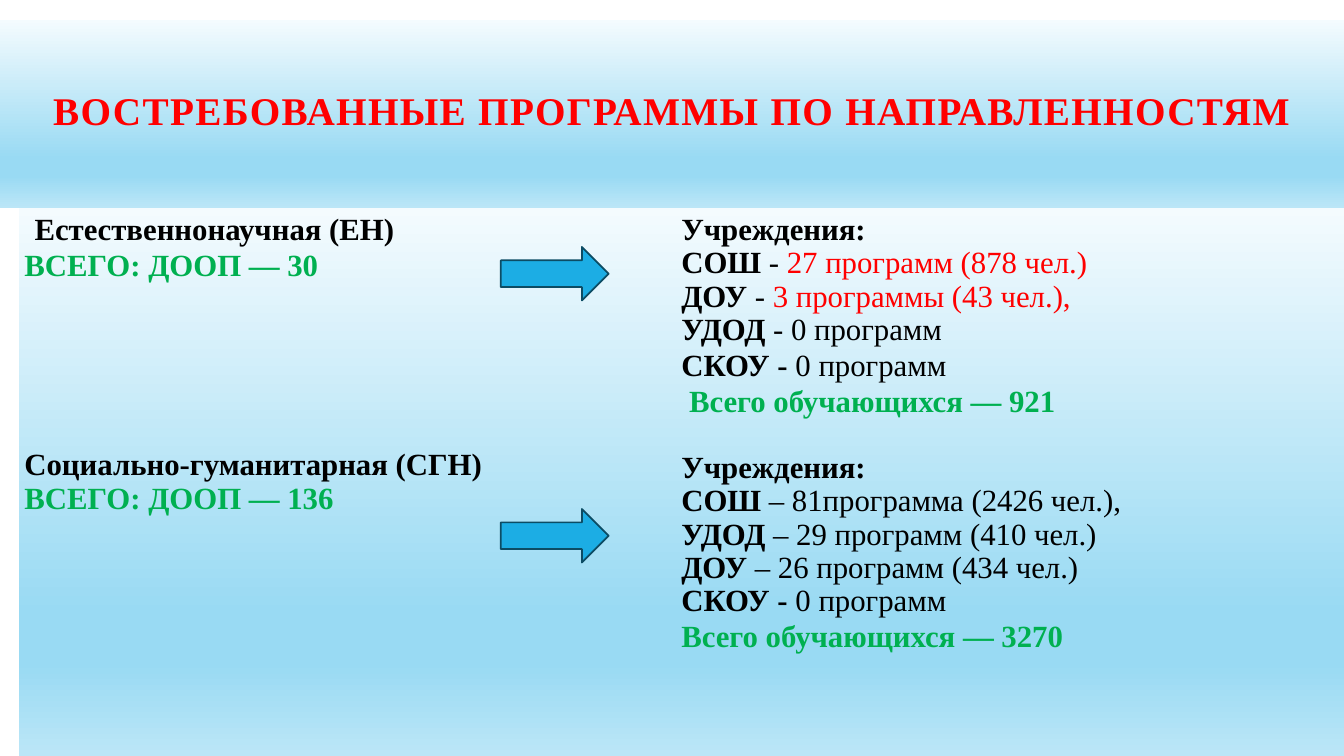
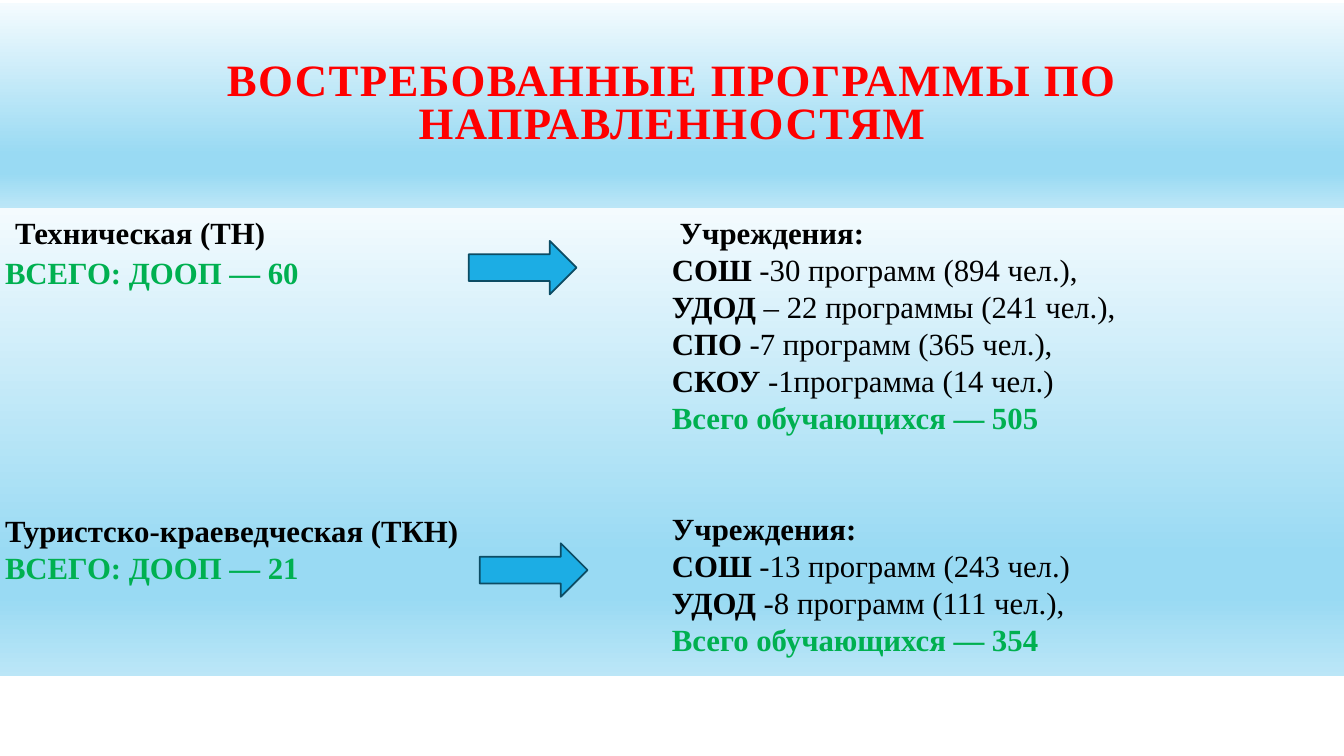
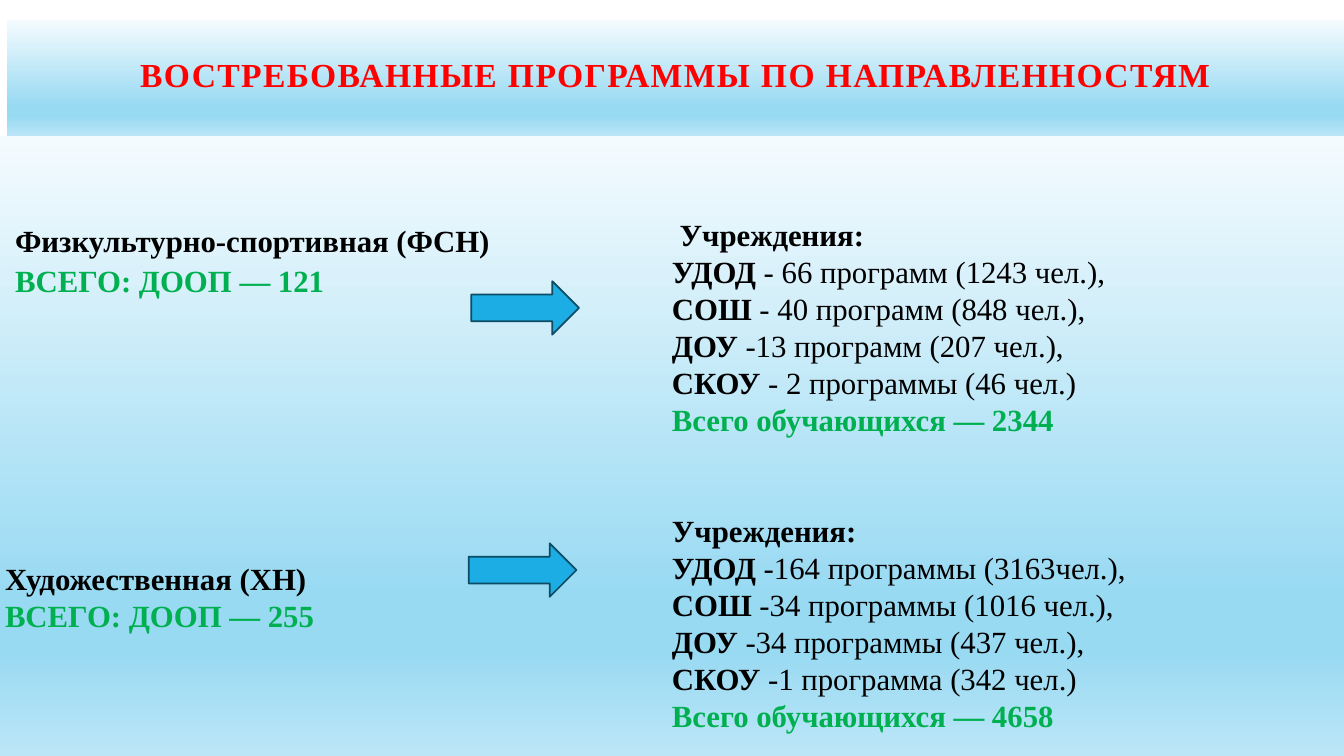
from lxml.etree import SubElement
from pptx import Presentation
from pptx.dml.color import RGBColor
from pptx.enum.shapes import MSO_SHAPE
from pptx.enum.text import MSO_ANCHOR, MSO_AUTO_SIZE, PP_ALIGN
from pptx.oxml.ns import qn
from pptx.util import Pt

# Shared style
FONT = "Times New Roman"
TITLE = "ВОСТРЕБОВАННЫЕ ПРОГРАММЫ ПО НАПРАВЛЕННОСТЯМ"
BLACK, RED, GREEN = "000000", "FF0000", "00B050"
BLUE, NAVY = "1CADE4", "0C4C64"
STOPS = [(0, "F4FBFE"), (74, "99DAF3"), (83, "99DAF3"), (100, "BBE6F7")]


def text(para, words, size=22, color=BLACK, bold=True, track=0):
    run = para.add_run()
    run.text = words
    run.font.name = FONT
    run.font.size = Pt(size)
    run.font.bold = bold
    run.font.color.rgb = RGBColor.from_string(color)
    if track:
        run._r.get_or_add_rPr().set("spc", str(track * 100))


def shade(shape):
    shape.fill.gradient()
    shape.fill.gradient_angle = 270
    stops = next(shape._element.iter(qn("a:gsLst")))
    stops.clear()
    for pos, color in STOPS:
        stop = SubElement(stops, qn("a:gs"), pos=str(pos * 1000))
        SubElement(stop, qn("a:srgbClr"), val=color)


# Block: left, top, lines, lines with a gap after, indents by line.
# A bar in a line splits bold, plain and red parts.
SLIDES = [
    dict(
        size=28, pitch=23.7,
        band=(0, 14.4, 960, 133.9), panel=(13.7, 148.3, 946.3, 391.7),
        arrows=[(357.8, 176.4), (357.8, 363.6)],
        blocks=[
            (17.5, 152.7, ["Естественнонаучная (ЕН)", "ВСЕГО: ДООП — 30"], [0], {0: 7.2}),
            (17.5, 320.6, ["Социально-гуманитарная (СГН)", "ВСЕГО: ДООП — 136"], [], {}),
            (486.7, 152.7, [
                "Учреждения:",
                "СОШ| - |27 программ (878 чел.)",
                "ДОУ| - |3 программы (43 чел.),",
                "УДОД| - 0 программ",
                "СКОУ - |0 программ",
                "Всего обучающихся — 921"], [3, 4], {5: 5.5}),
            (486.7, 322.7, [
                "Учреждения:",
                "СОШ| – 81программа (2426 чел.),",
                "УДОД| – 29 программ (410 чел.)",
                "ДОУ |– 26 программ (434 чел.)",
                "СКОУ - |0 программ",
                "Всего обучающихся — 3270"], [4], {}),
        ]),
    dict(
        size=32, pitch=26.4,
        band=(0, 2.2, 960, 146.1), panel=(0, 148.3, 960, 334.8),
        arrows=[(334.8, 172.1), (342.7, 388.1)],
        blocks=[
            (3.6, 152.9, ["Техническая (ТН)", "ВСЕГО: ДООП — 60"], [0], {0: 7.2}),
            (3.6, 365.7, ["Туристско-краеведческая (ТКН)", "ВСЕГО: ДООП — 21"], [], {}),
            (480, 152.9, [
                "Учреждения:",
                "СОШ| -30 программ (894 чел.),",
                "УДОД| – 22 программы (241 чел.),",
                "СПО| -7 программ (365 чел.),",
                "СКОУ| -1программа (14 чел.)",
                "Всего обучающихся — 505"], [], {0: 5.5}),
            (480, 364.3, [
                "Учреждения:",
                "СОШ| -13 программ (243 чел.)",
                "УДОД| -8 программ (111 чел.),",
                "Всего обучающихся — 354"], [], {}),
        ]),
    dict(
        size=24, pitch=26.4,
        band=(5, 14.4, 955, 82.8), panel=(0, 97.2, 960, 442.8),
        arrows=[(336.6, 200.9), (334.8, 388.1)],
        blocks=[
            (10.8, 158.6, ["Физкультурно-спортивная (ФСН)", "ВСЕГО: ДООП — 121"], [0], {}),
            (3.6, 400, ["Художественная (ХН)", "ВСЕГО: ДООП — 255"], [], {}),
            (480, 154.3, [
                "Учреждения:",
                "УДОД| - 66 программ (1243 чел.),",
                "СОШ| - 40 программ (848 чел.),",
                "ДОУ| -13 программ (207 чел.),",
                "СКОУ| - 2 программы (46 чел.)",
                "Всего обучающихся — 2344"], [], {0: 5.5}),
            (480, 365.7, [
                "Учреждения:",
                "УДОД| -164 программы (3163чел.),",
                "СОШ |-34 программы (1016 чел.),",
                "ДОУ| -34 программы (437 чел.),",
                "СКОУ| -1 программа (342 чел.)",
                "Всего обучающихся — 4658"], [], {}),
        ]),
]

deck = Presentation()
deck.slide_width, deck.slide_height = Pt(960), Pt(540)

for page in SLIDES:
    slide = deck.slides.add_slide(deck.slide_layouts[5])
    shapes = slide.shapes

    # Title band
    title = shapes.title
    title.left, title.top, title.width, title.height = map(Pt, page["band"])
    shade(title)
    frame = title.text_frame
    frame.word_wrap = True
    frame.auto_size = MSO_AUTO_SIZE.NONE
    frame.vertical_anchor = MSO_ANCHOR.MIDDLE
    para = frame.paragraphs[0]
    para.alignment = PP_ALIGN.CENTER
    para.line_spacing = 0.8
    text(para, TITLE, size=page["size"], color=RED, track=1)

    # Body panel
    panel = shapes.add_shape(MSO_SHAPE.RECTANGLE, *map(Pt, page["panel"]))
    panel.shadow.inherit = False
    panel.line.fill.background()
    shade(panel)

    # Programme names and their institutions
    for left, top, lines, gaps, indents in page["blocks"]:
        high = page["pitch"] * len(lines) + 2 * len(gaps)
        box = shapes.add_textbox(Pt(left), Pt(top), Pt(440), Pt(high))
        frame = box.text_frame
        frame.word_wrap = True
        frame.margin_left = frame.margin_right = 0
        frame.margin_top = frame.margin_bottom = 0
        for i, line in enumerate(lines):
            para = frame.paragraphs[0] if i == 0 else frame.add_paragraph()
            para.line_spacing = Pt(page["pitch"])
            para.space_after = Pt(2 if i in gaps else 0)
            if i in indents:
                para._p.get_or_add_pPr().set("marL", str(Pt(indents[i])))
            total = line.upper().startswith("ВСЕГО")
            colors = [GREEN if total else BLACK, BLACK, RED]
            for j, part in enumerate(line.split("|")):
                text(para, part, color=colors[j], bold=j == 0)

    # Arrows
    for left, top in page["arrows"]:
        arrow = shapes.add_shape(MSO_SHAPE.RIGHT_ARROW, Pt(left), Pt(top), Pt(77), Pt(38.2))
        arrow.shadow.inherit = False
        arrow.fill.solid()
        arrow.fill.fore_color.rgb = RGBColor.from_string(BLUE)
        arrow.line.color.rgb = RGBColor.from_string(NAVY)
        arrow.line.width = Pt(1.25)

deck.save("out.pptx")
